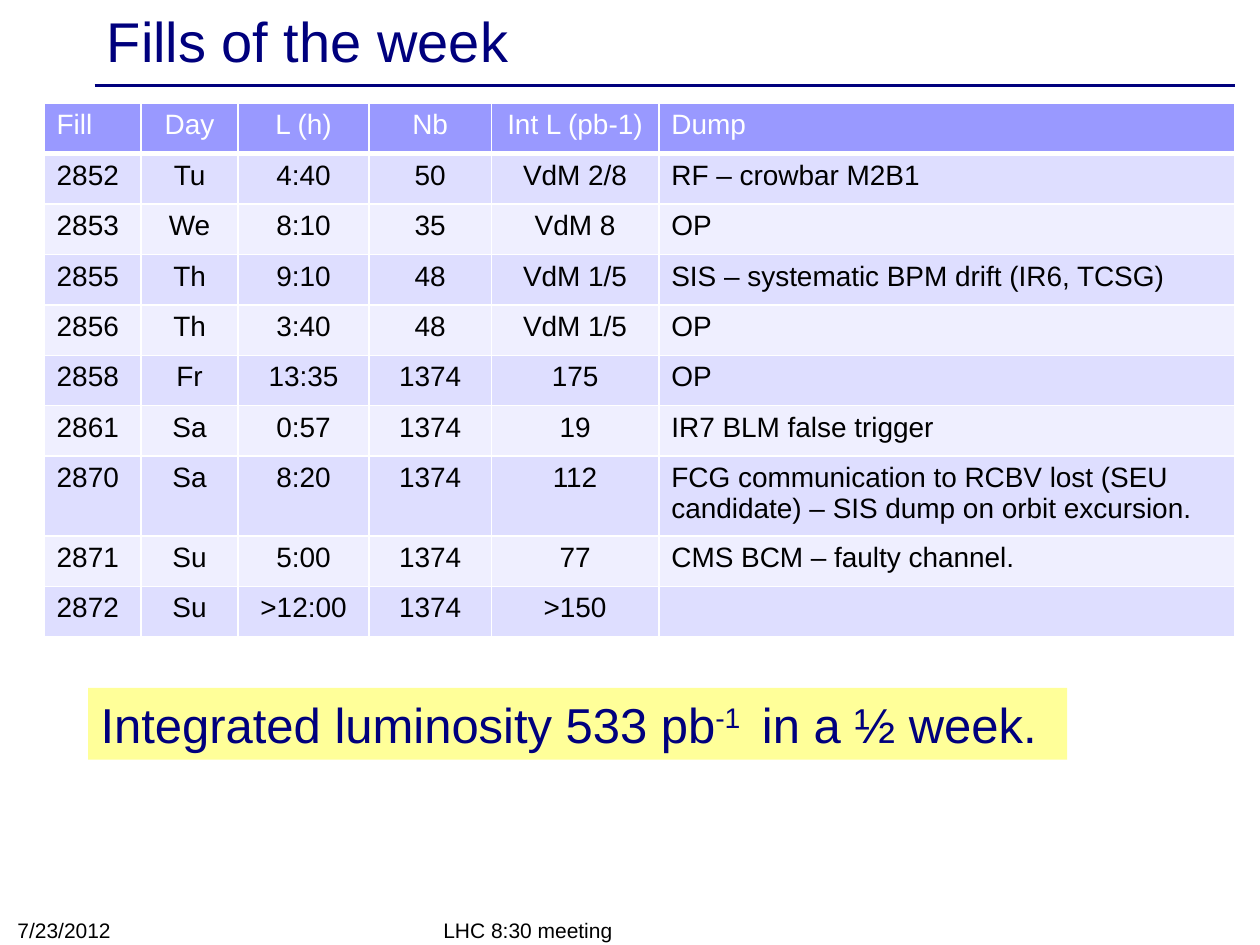
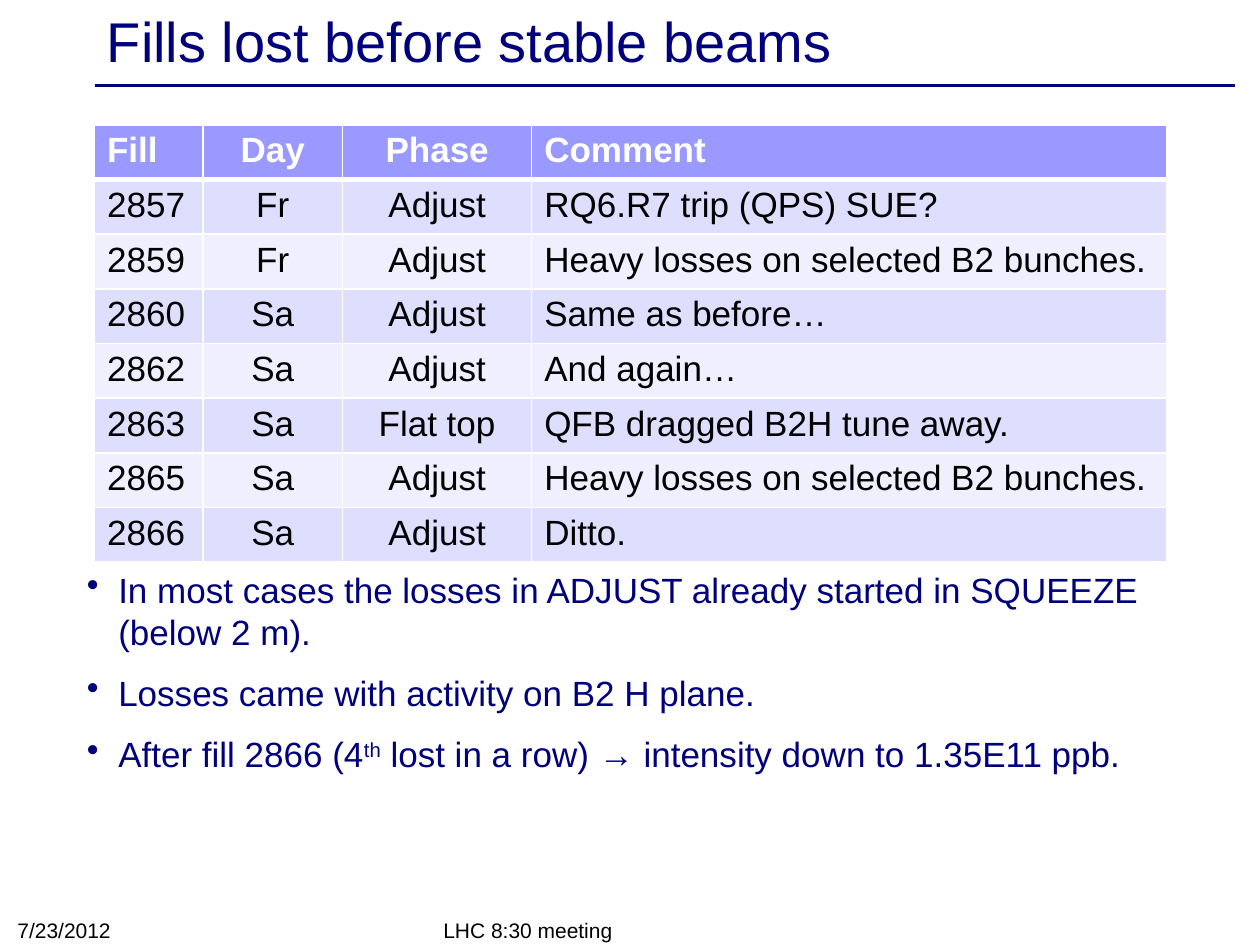
"""Builds the two slides on the LHC fills of the week."""
import pptx
import pptx.dml.color
import pptx.enum.shapes
import pptx.enum.text
import pptx.oxml.ns
import pptx.util
from lxml import etree

Inches = pptx.util.Inches
Pt = pptx.util.Pt
RGBColor = pptx.dml.color.RGBColor
Align = pptx.enum.text.PP_ALIGN
Anchor = pptx.enum.text.MSO_ANCHOR
qn = pptx.oxml.ns.qn

FONT = "Arial"
NAVY = RGBColor(0x00, 0x00, 0x7D)
BLACK = RGBColor(0x00, 0x00, 0x00)
WHITE = RGBColor(0xFF, 0xFF, 0xFF)
HEADER_BLUE = RGBColor(0x99, 0x99, 0xFF)
ROW_BANDS = (RGBColor(0xEF, 0xEF, 0xFF), RGBColor(0xDE, 0xDE, 0xFF))
YELLOW = RGBColor(0xFF, 0xFF, 0x99)

WEEK_FILLS = [
    ("Fill", "Day", "L (h)", "Nb", "Int L (pb-1)", "Dump"),
    ("2852", "Tu", "4:40", "50", "VdM 2/8", "RF – crowbar M2B1"),
    ("2853", "We", "8:10", "35", "VdM 8", "OP"),
    ("2855", "Th", "9:10", "48", "VdM 1/5", "SIS – systematic BPM drift (IR6, TCSG)"),
    ("2856", "Th", "3:40", "48", "VdM 1/5", "OP"),
    ("2858", "Fr", "13:35", "1374", "175", "OP"),
    ("2861", "Sa", "0:57", "1374", "19", "IR7 BLM false trigger"),
    ("2870", "Sa", "8:20", "1374", "112",
     "FCG communication to RCBV lost (SEU candidate) – SIS dump on orbit excursion."),
    ("2871", "Su", "5:00", "1374", "77", "CMS BCM – faulty channel."),
    ("2872", "Su", ">12:00", "1374", ">150", ""),
]

LOST_FILLS = [
    ("Fill", "Day", "Phase", "Comment"),
    ("2857", "Fr", "Adjust", "RQ6.R7 trip (QPS) SUE?"),
    ("2859", "Fr", "Adjust", "Heavy losses on selected B2 bunches."),
    ("2860", "Sa", "Adjust", "Same as before…"),
    ("2862", "Sa", "Adjust", "And again…"),
    ("2863", "Sa", "Flat top", "QFB dragged B2H tune away."),
    ("2865", "Sa", "Adjust", "Heavy losses on selected B2 bunches."),
    ("2866", "Sa", "Adjust", "Ditto."),
]

LOSS_REMARKS = [
    ("In most cases the losses in ADJUST already started in SQUEEZE (below 2 m).",),
    ("Losses came with activity on B2 H plane.",),
    ("After fill 2866 (4", "th", " lost in a row) → intensity down to 1.35E11 ppb."),
]


def add_bullet(paragraph, indent):
    """Give a paragraph a round bullet with a hanging indent."""
    properties = paragraph._p.get_or_add_pPr()
    properties.set("marL", str(indent))
    properties.set("indent", str(-indent))
    etree.SubElement(properties, qn("a:buChar")).set("char", "•")


def write_text(frame, paragraphs, size, color=NAVY, bold=False, align=Align.LEFT,
               anchor=Anchor.TOP, wrap=True, bullet=False, gap=0):
    """Write paragraphs of runs, where every second run is superscript."""
    frame.word_wrap = wrap
    frame.vertical_anchor = anchor
    for index, runs in enumerate(paragraphs):
        paragraph = frame.add_paragraph() if index else frame.paragraphs[0]
        paragraph.alignment = align
        if index:
            paragraph.space_before = Pt(gap)
        if bullet:
            add_bullet(paragraph, Inches(0.25))
        for position, text in enumerate(runs):
            run = paragraph.add_run()
            run.text = text
            run.font.name = FONT
            run.font.size = Pt(size)
            run.font.bold = bold
            run.font.color.rgb = color
            if position % 2:
                run._r.get_or_add_rPr().set("baseline", "30000")


def add_text(slide, left, top, width, height, paragraphs, **text_format):
    """Add a text box."""
    box = slide.shapes.add_textbox(Inches(left), Inches(top), Inches(width), Inches(height))
    write_text(box.text_frame, paragraphs, **text_format)


def add_highlight(slide, left, top, width, height, paragraphs, **text_format):
    """Add a yellow rectangle with text."""
    panel = slide.shapes.add_shape(
        pptx.enum.shapes.MSO_SHAPE.RECTANGLE,
        Inches(left), Inches(top), Inches(width), Inches(height))
    panel.shadow.inherit = False
    panel.fill.solid()
    panel.fill.fore_color.rgb = YELLOW
    panel.line.fill.background()
    write_text(panel.text_frame, paragraphs, **text_format)


def set_borders(cell, **widths):
    """Draw white borders of the given point widths on a cell."""
    properties = cell._tc.get_or_add_tcPr()
    for side in ("L", "R", "T", "B"):
        line = etree.SubElement(properties, qn(f"a:ln{side}"))
        line.set("w", str(Pt(widths.get(side, 1))))
        fill = etree.SubElement(line, qn("a:solidFill"))
        etree.SubElement(fill, qn("a:srgbClr")).set("val", str(WHITE))


def add_fill_table(slide, left, top, rows, column_widths, row_heights, size, bold_header=False):
    """Add a banded table whose middle columns are centred."""
    table = slide.shapes.add_table(
        len(rows), len(column_widths), Inches(left), Inches(top),
        Inches(sum(column_widths)), Inches(sum(row_heights))).table
    for column, width in zip(table.columns, column_widths):
        column.width = Inches(width)
    for r, (row, height) in enumerate(zip(rows, row_heights)):
        table.rows[r].height = Inches(height)
        header = r == 0
        for c, text in enumerate(row):
            cell = table.cell(r, c)
            set_borders(cell, T=3 if r == 1 else 1, B=3 if header else 1)
            cell.fill.solid()
            cell.fill.fore_color.rgb = HEADER_BLUE if header else ROW_BANDS[r % 2]
            if text:
                write_text(cell.text_frame, [(text,)], size=size,
                           color=WHITE if header else BLACK, bold=header and bold_header,
                           align=Align.CENTER if 0 < c < len(row) - 1 else Align.LEFT)


def add_base_slide(deck, title):
    """Add a slide with title, rule and footers."""
    slide = deck.slides.add_slide(deck.slide_layouts[6])
    rule = slide.shapes.add_connector(
        pptx.enum.shapes.MSO_CONNECTOR.STRAIGHT,
        Inches(0.75), Inches(0.68), Inches(9.8), Inches(0.68))
    rule.line.color.rgb = NAVY
    rule.line.width = Pt(2)
    etree.SubElement(rule._element.spPr, qn("a:effectLst"))
    add_text(slide, 0.75, 0.03, 9, 0.57, [(title,)], size=32, anchor=Anchor.MIDDLE)
    for left, width, footer in ((3.42, 3.17, "LHC 8:30 meeting"), (0.04, 2.33, "7/23/2012")):
        add_text(slide, left, 7.24, width, 0.29, [(footer,)], size=12, color=BLACK,
                 anchor=Anchor.BOTTOM)
    return slide


def main():
    """Build and save the deck."""
    deck = pptx.Presentation()
    deck.slide_width = Inches(10)
    deck.slide_height = Inches(7.5)

    week = add_base_slide(deck, "Fills of the week")
    add_fill_table(week, 0.35, 0.82, WEEK_FILLS, (0.77, 0.77, 1.04, 0.97, 1.33, 4.57),
                   [0.4] * 7 + [0.6] + [0.4] * 2, size=16)
    add_highlight(week, 0.7, 5.46, 7.77, 0.57,
                  [("Integrated luminosity 533 pb", "-1 ", " in a ½ week.")],
                  size=28, wrap=False)

    lost = add_base_slide(deck, "Fills lost before stable beams")
    add_fill_table(lost, 0.75, 0.99, LOST_FILLS, (0.86, 1.11, 1.5, 5.04),
                   [0.41] * len(LOST_FILLS), size=20, bold_header=True)
    add_text(lost, 0.59, 4.46, 8.98, 1.78, LOSS_REMARKS, size=20, bullet=True, gap=11)

    deck.save("out.pptx")


if __name__ == "__main__":
    main()
